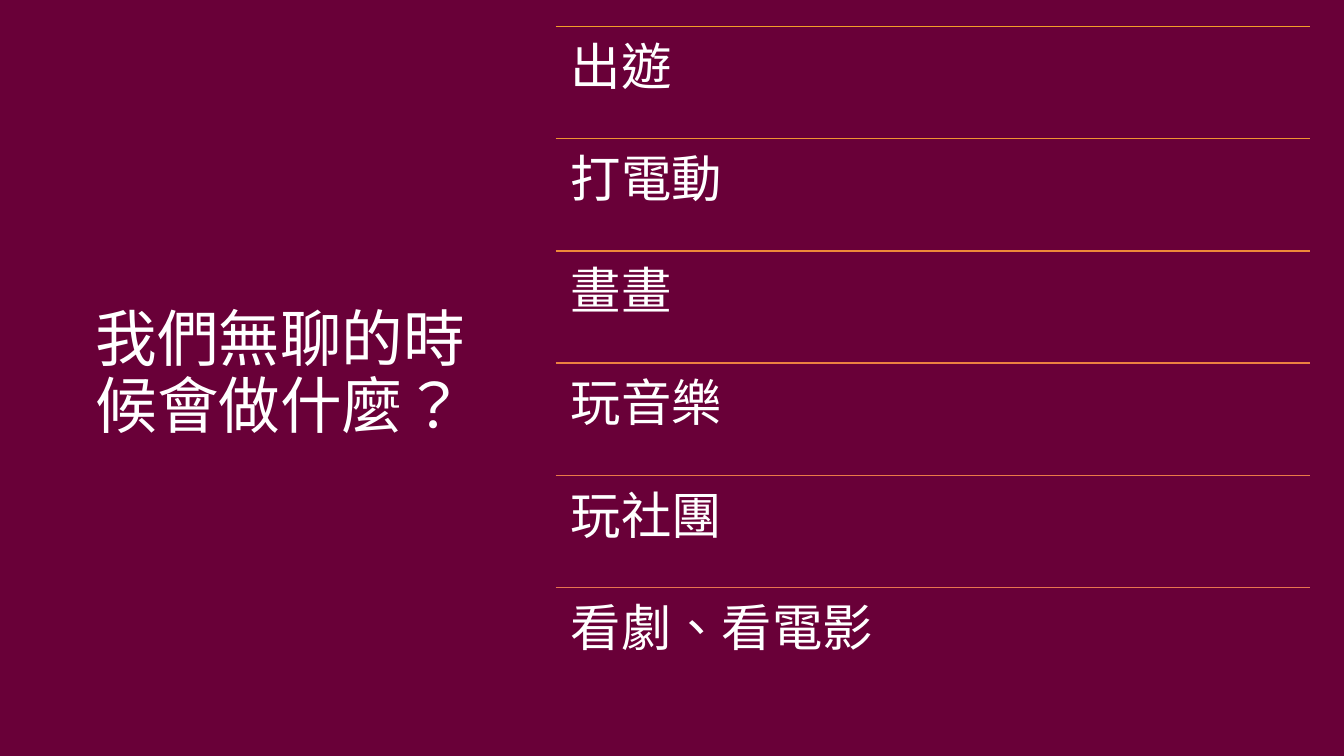
"""Builds a slide with a question on the left and a ruled list of answers on the right."""
import lxml.etree
import pptx
import pptx.dml.color
import pptx.enum.lang
import pptx.enum.shapes
import pptx.enum.text
import pptx.oxml.ns
import pptx.util

Pt = pptx.util.Pt
qn = pptx.oxml.ns.qn

COLORS = {
    "base": "420023",
    "veil": "6E003B",
    "text": "FFFFFF",
    "rules": ["F39E29", "F19331", "EE8939", "EC8141", "EA7A48", "E87450"],
}
QUESTION = "我們無聊的時候會做什麼？"
ANSWERS = ["出遊", "打電動", "畫畫", "玩音樂", "玩社團", "看劇、看電影"]


def rgb(color):
    return pptx.dml.color.RGBColor.from_string(color)


def add_panel(shapes, box, color, opacity=100):
    x, y, w, h = box
    sp = shapes.add_shape(pptx.enum.shapes.MSO_SHAPE.RECTANGLE, Pt(x), Pt(y), Pt(w), Pt(h))
    sp.shadow.inherit = False
    sp.line.fill.background()
    sp.fill.solid()
    sp.fill.fore_color.rgb = rgb(color)
    if opacity < 100:
        clr = sp.fill._xPr.find(qn("a:solidFill"))[0]
        lxml.etree.SubElement(clr, qn("a:alpha")).set("val", str(opacity * 1000))


def add_text(shapes, box, text, font, size, inset, anchor):
    x, y, w, h = box
    sp = shapes.add_textbox(Pt(x), Pt(y), Pt(w), Pt(h))
    tf = sp.text_frame
    tf.word_wrap = True
    tf.vertical_anchor = anchor
    tf.margin_left = tf.margin_right = Pt(inset[0])
    tf.margin_top = tf.margin_bottom = Pt(inset[1])
    p = tf.paragraphs[0]
    p.line_spacing = 0.9
    r = p.add_run()
    r.text = text
    r.font.name = font
    r.font.size = Pt(size)
    r.font.color.rgb = rgb(COLORS["text"])
    r.font.language_id = pptx.enum.lang.MSO_LANGUAGE_ID.TRADITIONAL_CHINESE


def add_rule(shapes, x, y, w, color):
    cxn = shapes.add_connector(
        pptx.enum.shapes.MSO_CONNECTOR.STRAIGHT, Pt(x), Pt(y), Pt(x + w), Pt(y))
    cxn.line.color.rgb = rgb(color)
    cxn.line.width = Pt(1)
    lxml.etree.SubElement(cxn._element.spPr, qn("a:effectLst"))


def add_background(slide, box):
    slide.background.fill.solid()
    slide.background.fill.fore_color.rgb = rgb(COLORS["base"])
    add_panel(slide.shapes, box, COLORS["base"])
    add_panel(slide.shapes, box, COLORS["veil"], opacity=90)


def add_question(slide, box):
    add_text(slide.shapes, box, QUESTION, "Cabin", 44, (7.2, 3.6),
             pptx.enum.text.MSO_ANCHOR.MIDDLE)


def add_answers(slide, box):
    x, y, w, h = box
    shapes = slide.shapes.add_group_shape().shapes
    row_h = h / len(ANSWERS)
    for i, (answer, color) in enumerate(zip(ANSWERS, COLORS["rules"])):
        top = y + i * row_h
        add_rule(shapes, x, top, w, color)
        add_text(shapes, (x, top, w, row_h), answer, "Calibri", 36, (10.8, 10.8),
                 pptx.enum.text.MSO_ANCHOR.TOP)


def main():
    prs = pptx.Presentation()
    prs.slide_width, prs.slide_height = Pt(960), Pt(540)
    slide = prs.slides.add_slide(prs.slide_layouts[6])
    add_background(slide, (0, 0, 960, 540))
    add_question(slide, (61.2, 38.9, 311, 457.9))
    add_answers(slide, (396.9, 18.9, 538.5, 481))
    prs.save("out.pptx")


if __name__ == "__main__":
    main()
